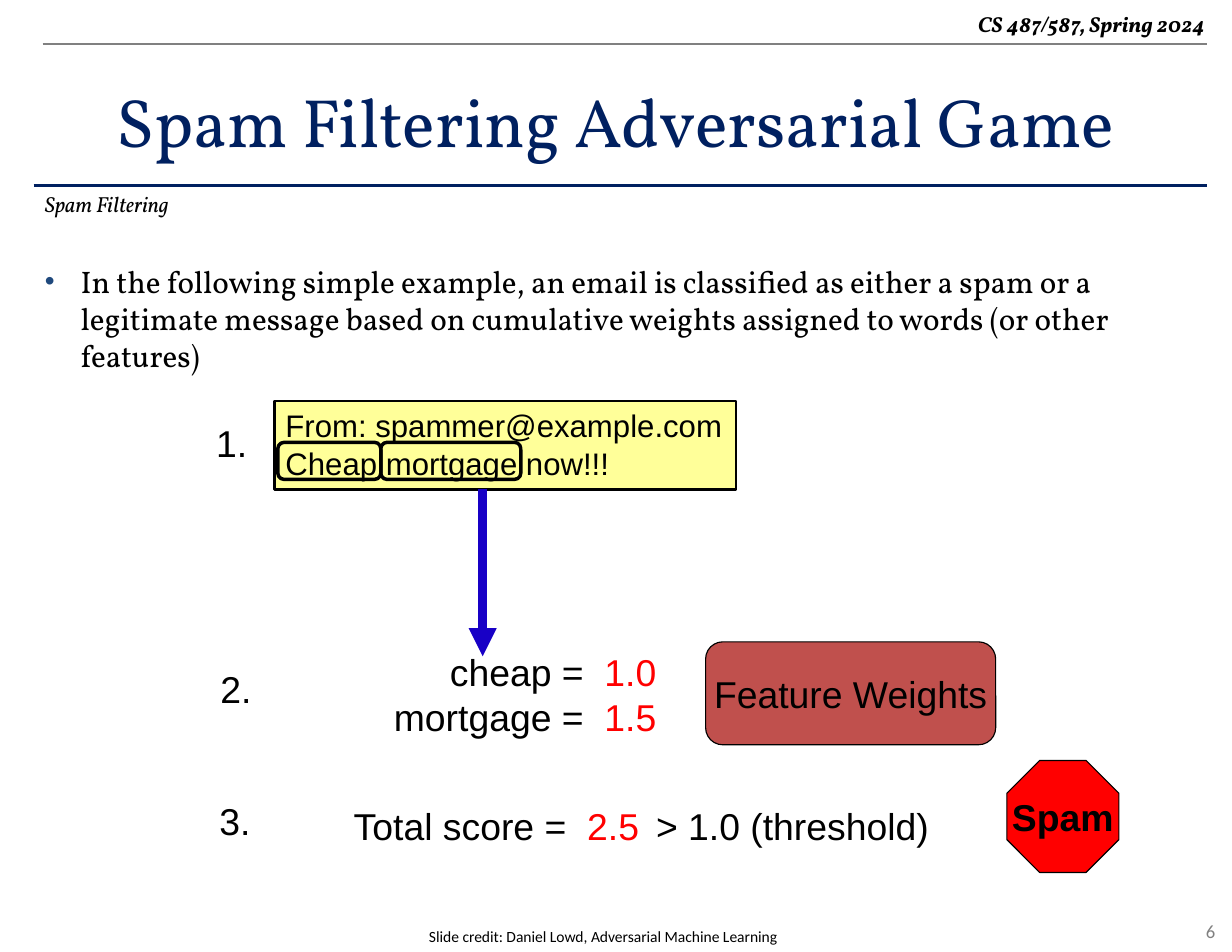
from lxml.etree import SubElement
from pptx import Presentation
from pptx.dml.color import RGBColor
from pptx.enum.shapes import MSO_CONNECTOR, MSO_SHAPE
from pptx.enum.text import MSO_ANCHOR, MSO_AUTO_SIZE, PP_ALIGN
from pptx.oxml.ns import qn
from pptx.util import Pt

BLACK = RGBColor(0x00, 0x00, 0x00)
NAVY = RGBColor(0x00, 0x20, 0x60)
GRAY = RGBColor(0x80, 0x80, 0x80)
RED = RGBColor(0xFF, 0x00, 0x00)
YELLOW = RGBColor(0xFF, 0xFF, 0x99)
BRICK = RGBColor(0xC0, 0x50, 0x4D)
BLUE = RGBColor(0x18, 0x00, 0xC6)

LEFT, CENTER, RIGHT = PP_ALIGN.LEFT, PP_ALIGN.CENTER, PP_ALIGN.RIGHT


def write(shape, lines, align=LEFT, color=BLACK, **font_format):
    """Fill a shape with lines, each a list of runs; odd runs are red values."""
    frame = shape.text_frame
    for number, runs in enumerate(lines):
        paragraph = frame.add_paragraph() if number else frame.paragraphs[0]
        paragraph.alignment = align
        for position, words in enumerate(runs):
            run = paragraph.add_run()
            run.text = words
            for attribute, value in font_format.items():
                setattr(run.font, attribute, value)
            run.font.color.rgb = RED if position % 2 else color


def draw_line(x1, y1, x2, y2, color, width):
    line = slide.shapes.add_connector(
        MSO_CONNECTOR.STRAIGHT, Pt(x1), Pt(y1), Pt(x2), Pt(y2))
    line.line.color.rgb = color
    line.line.width = Pt(width)
    SubElement(line._element.spPr, qn("a:effectLst"))
    return line


presentation = Presentation()
presentation.slide_width, presentation.slide_height = Pt(792), Pt(612)
slide = presentation.slides.add_slide(presentation.slide_layouts[3])

# Header and title rules
draw_line(21.6, 119.5, 776.2, 119.5, NAVY, 2)
draw_line(27.4, 28.1, 776.2, 28.1, GRAY, 1.5)

# Title, bullet list and section name
title, body, section = slide.placeholders
placeholders = [
    (title, (0, 36, 792, 82.8), "Spam Filtering Adversarial Game", CENTER, NAVY,
     {"size": Pt(44)}),
    (body, (21.6, 164.9, 754.6, 422.6),
     "In the following simple example, an email is classified as either a spam "
     "or a legitimate message based on cumulative weights assigned to words "
     "(or other features)", LEFT, BLACK, {"size": Pt(20)}),
    (section, (21.6, 118.8, 487.4, 27.4), "Spam Filtering", LEFT, BLACK,
     {"size": Pt(14), "italic": True}),
]
for holder, box, words, align, color, font_format in placeholders:
    holder.left, holder.top, holder.width, holder.height = map(Pt, box)
    holder.text_frame.auto_size = MSO_AUTO_SIZE.NONE
    write(holder, [[words]], align, color, name="Vollkorn", **font_format)
title.text_frame.vertical_anchor = MSO_ANCHOR.MIDDLE

bullet = body.text_frame.paragraphs[0]._p.get_or_add_pPr()
bullet.set("marL", str(Pt(23)))
bullet.set("indent", str(-Pt(23)))
SubElement(SubElement(bullet, qn("a:buClr")), qn("a:srgbClr")).set("val", "1F497D")
SubElement(bullet, qn("a:buSzPct")).set("val", "90000")
SubElement(bullet, qn("a:buChar")).set("char", "•")

no_bullet = section.text_frame.paragraphs[0]._p.get_or_add_pPr()
no_bullet.set("marL", "0")
no_bullet.set("indent", "0")
SubElement(no_bullet, qn("a:buNone"))

# Email, feature weights and verdict
EXAMPLE = {"name": "Arial", "size": Pt(24)}
MIDDLE, TOP = MSO_ANCHOR.MIDDLE, MSO_ANCHOR.TOP
boxes = [
    (MSO_SHAPE.RECTANGLE, (176.4, 257.8, 296.6, 56.9), YELLOW, 1.5,
     [["From: spammer@example.com"], ["Cheap mortgage now!!!"]],
     LEFT, TOP, True, {"size": Pt(20)}),
    (MSO_SHAPE.ROUNDED_RECTANGLE, (453.6, 412.6, 186.5, 66.2), BRICK, 0.75,
     [["Feature Weights"]], CENTER, MIDDLE, False, {}),
    (MSO_SHAPE.OCTAGON, (647.3, 488.9, 72, 72), RED, 0.75,
     [["Spam"]], CENTER, MIDDLE, False, {"bold": True}),
    (MSO_SHAPE.ROUNDED_RECTANGLE, (178.6, 284.4, 66.2, 23.8), None, 2.25,
     [], LEFT, MIDDLE, True, {}),
    (MSO_SHAPE.ROUNDED_RECTANGLE, (244.8, 284.4, 90, 23.8), None, 2.25,
     [], LEFT, MIDDLE, True, {}),
]
for preset, box, fill, width, lines, align, anchor, wrap, changes in boxes:
    part = slide.shapes.add_shape(preset, *map(Pt, box))
    part.shadow.inherit = False
    if fill is None:
        part.fill.background()
    else:
        part.fill.solid()
        part.fill.fore_color.rgb = fill
    part.line.color.rgb = BLACK
    part.line.width = Pt(width)
    part.text_frame.word_wrap = wrap
    part.text_frame.vertical_anchor = anchor
    write(part, lines, align, **{**EXAMPLE, **changes})

arrow = draw_line(310.3, 314.6, 310.3, 421.9, BLUE, 6)
SubElement(arrow.line._get_or_add_ln(), qn("a:tailEnd")).set("type", "triangle")

# Step numbers, scores, header and footer
HEADER = {"name": "Vollkorn", "size": Pt(14), "bold": True, "italic": True}
PAGE = {"name": "Calibri", "size": Pt(12)}
CREDIT = {"name": "Calibri", "size": Pt(10)}
labels = [
    ((131.8, 266.4, 34.6, 36), [["1."]], LEFT, BLACK, False, EXAMPLE),
    ((134.6, 424.8, 34.6, 36), [["2."]], LEFT, BLACK, False, EXAMPLE),
    ((133.9, 509.8, 34.6, 36), [["3."]], LEFT, BLACK, False, EXAMPLE),
    ((244.1, 414, 185, 65.5), [["cheap =  ", "1.0"], ["mortgage =  ", "1.5"]],
     RIGHT, BLACK, False, EXAMPLE),
    ((220.3, 512.6, 200.9, 36), [["Total score =  ", "2.5"]],
     LEFT, BLACK, False, EXAMPLE),
    ((414.7, 512.6, 190.1, 36), [["> 1.0 (threshold)"]],
     LEFT, BLACK, False, EXAMPLE),
    ((8.6, 3.6, 773.3, 24.5), [["CS 487/587, Spring 2024"]],
     RIGHT, BLACK, True, HEADER),
    ((701.3, 587.5, 87.1, 21.6), [["6"]], RIGHT, GRAY, True, PAGE),
    ((90, 592.6, 595.4, 19.4),
     [["Slide credit: Daniel Lowd, Adversarial Machine Learning"]],
     CENTER, BLACK, True, CREDIT),
]
for box, lines, align, color, wrap, font_format in labels:
    label = slide.shapes.add_textbox(*map(Pt, box))
    label.text_frame.word_wrap = wrap
    label.text_frame.auto_size = MSO_AUTO_SIZE.SHAPE_TO_FIT_TEXT
    write(label, lines, align, color, **font_format)

presentation.save("out.pptx")
